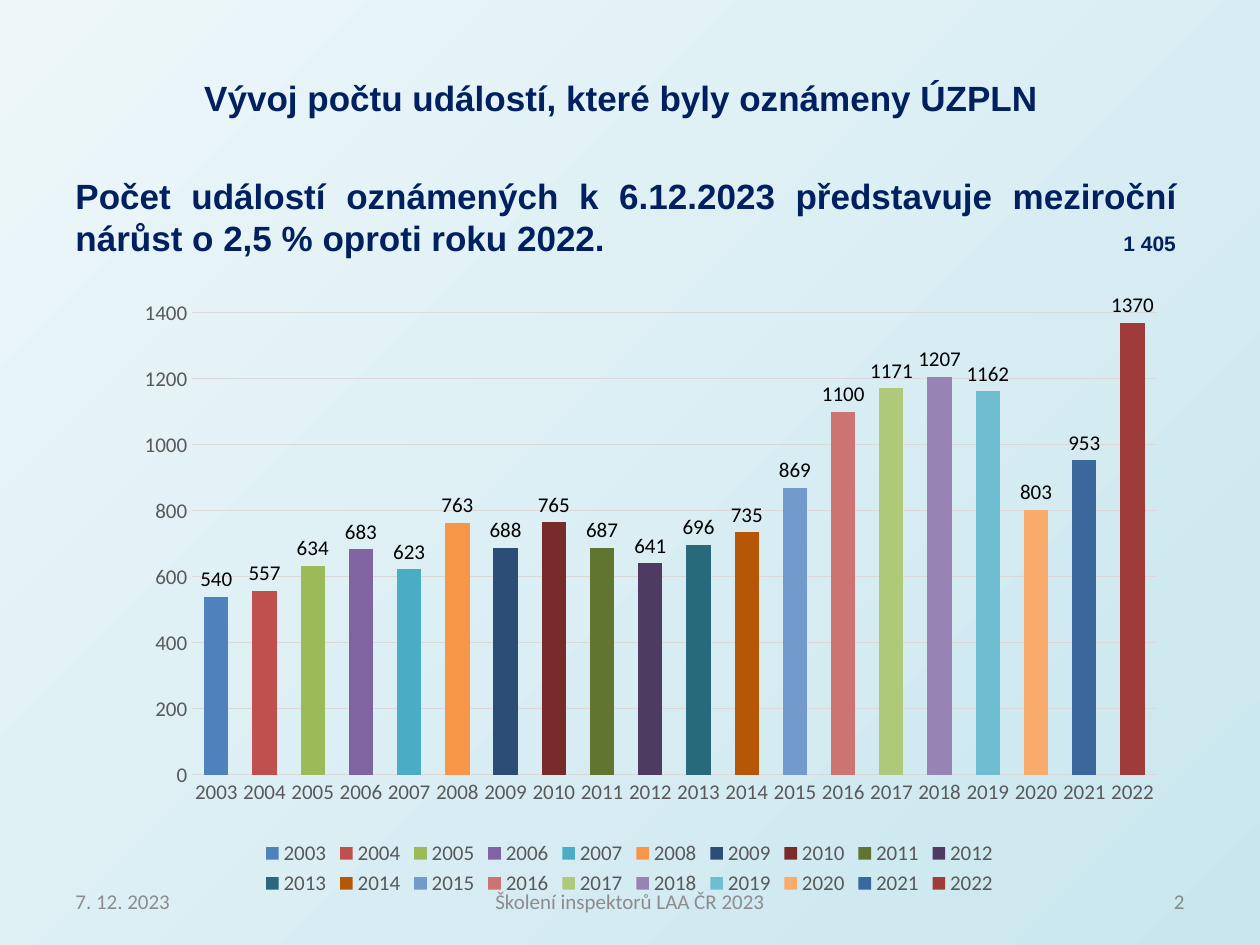
from lxml import etree
from pptx import Presentation
from pptx.chart.data import CategoryChartData
from pptx.dml.color import RGBColor
from pptx.enum.chart import XL_CHART_TYPE, XL_LABEL_POSITION, XL_LEGEND_POSITION, XL_TICK_MARK
from pptx.enum.text import MSO_ANCHOR, PP_ALIGN
from pptx.oxml import parse_xml
from pptx.util import Pt

LEFT, MID, RIGHT, JUST = PP_ALIGN.LEFT, PP_ALIGN.CENTER, PP_ALIGN.RIGHT, PP_ALIGN.JUSTIFY
TOP, CENTER = MSO_ANCHOR.TOP, MSO_ANCHOR.MIDDLE
COLUMN = XL_CHART_TYPE.COLUMN_CLUSTERED
BOTTOM = XL_LEGEND_POSITION.BOTTOM
OUTER = XL_LABEL_POSITION.OUTSIDE_END
NONE = XL_TICK_MARK.NONE

NAVY, GREY, DARK, RULE = "002060", "8C8C8C", "595959", "D9D9D9"
COUNTS = [540, 557, 634, 683, 623, 763, 688, 765, 687, 641,
          696, 735, 869, 1100, 1171, 1207, 1162, 803, 953, 1370]
HUES = """4F81BD C0504D 9BBB59 8064A2 4BACC6 F79646 2C4D75 772C2A 5F7530 4D3B62
276A7C B65708 729ACA CD7371 AFC97A 9983B5 6FBDD1 F9AB6B 3A679C 9F3B38""".split()
PLOT = {"x": 0.097, "y": 0.076, "w": 0.889, "h": 0.726}


def color(code):
    """Turn a hex string into a colour."""
    return RGBColor.from_string(code)


def style(font, size=12, hue=DARK, face="Calibri", bold=False):
    """Format a font."""
    font.size, font.name, font.bold = Pt(size), face, bold
    font.color.rgb = color(hue)


def write(slide, box, text, align=LEFT, anchor=TOP, **look):
    """Place one paragraph of text in a box."""
    frame = slide.shapes.add_textbox(*map(Pt, box)).text_frame
    frame.word_wrap = True
    frame.vertical_anchor = anchor
    para = frame.paragraphs[0]
    para.alignment = align
    run = para.add_run()
    run.text = text
    style(run.font, **look)


def paint(slide):
    """Fill the background with a diagonal gradient."""
    fill = slide.background.fill
    fill.gradient()
    fill.gradient_angle = 315
    for stop, hue in zip(fill.gradient_stops, ("EDF7F9", "C9E6EE")):
        stop.color.rgb = color(hue)


def head(slide, box):
    """Write the title, the message and the latest count."""
    x, y, w, h = box
    look = {"size": 20, "hue": NAVY, "face": "Arial", "bold": True}
    write(slide, (x, y, w - 6, 30), "Vývoj počtu událostí, které byly oznámeny ÚZPLN",
          align=MID, **look)
    write(slide, (x, y + 56, w, h - 56),
          "Počet událostí oznámených k 6.12.2023 představuje meziroční "
          "nárůst o 2,5 % oproti roku 2022.", align=JUST, **look)
    write(slide, (x + w - 77, y + 88, 76, 22), "1 405", align=RIGHT, **{**look, "size": 12})


def rule(line):
    """Draw a thin grey chart line."""
    line.color.rgb = color(RULE)
    line.width = Pt(0.75)


def place(chart):
    """Fix the inner plot area within the chart."""
    area = chart.plots[0]._element.getparent()
    space = etree.QName(area).namespace
    parts = "".join(f'<c:{key}Mode val="edge"/>' for key in "xy")
    parts += "".join(f'<c:{key} val="{val}"/>' for key, val in PLOT.items())
    for old in area.findall(f"{{{space}}}layout"):
        area.remove(old)
    area.insert(0, parse_xml(
        f'<c:layout xmlns:c="{space}"><c:manualLayout><c:layoutTarget val="inner"/>'
        f'{parts}</c:manualLayout></c:layout>'))


def graph(slide, box):
    """Draw the yearly counts as coloured columns."""
    data = CategoryChartData()
    data.categories = [str(year) for year in range(2003, 2023)]
    data.add_series("Series 1", COUNTS)
    chart = slide.shapes.add_chart(COLUMN, *map(Pt, box), data).chart
    style(chart.font, size=10, hue="000000")
    chart.has_title = False
    chart.has_legend = True
    chart.legend.position = BOTTOM
    chart.legend.include_in_layout = False
    style(chart.legend.font)
    for axis in (chart.category_axis, chart.value_axis):
        axis.major_tick_mark = axis.minor_tick_mark = NONE
        style(axis.tick_labels.font)
    rule(chart.category_axis.format.line)
    scale = chart.value_axis
    scale.minimum_scale, scale.maximum_scale, scale.major_unit = 0, 1400, 200
    scale.format.line.fill.background()
    rule(scale.major_gridlines.format.line)
    plot = chart.plots[0]
    plot.gap_width, plot.overlap, plot.vary_by_categories = 99, -13, True
    row = plot.series[0]
    for i, hue in enumerate(HUES):
        fill = row.points[i].format.fill
        fill.solid()
        fill.fore_color.rgb = color(hue)
    tags = row.data_labels
    tags.show_value, tags.position = True, OUTER
    style(tags.font, hue="000000")
    place(chart)


def foot(slide, box):
    """Write the date, the event and the page number."""
    x, y, w, h = box
    side, wide = 168, 228
    write(slide, (x, y, side, h), "7. 12. 2023", anchor=CENTER, hue=GREY)
    write(slide, (x + (w - wide) / 2, y, wide, h), "Školení inspektorů LAA ČR 2023",
          align=MID, anchor=CENTER, hue=GREY)
    write(slide, (x + w - side, y, side, h), "2", align=RIGHT, anchor=CENTER, hue="898989")


def main():
    """Build and save the slide."""
    deck = Presentation()
    deck.slide_width, deck.slide_height = Pt(720), Pt(540)
    slide = deck.slides.add_slide(deck.slide_layouts[6])
    paint(slide)
    head(slide, (36, 40, 644, 114))
    graph(slide, (49.7, 151.2, 620, 363.6))
    foot(slide, (36, 500.4, 648, 28.8))
    deck.save("out.pptx")


if __name__ == "__main__":
    main()
